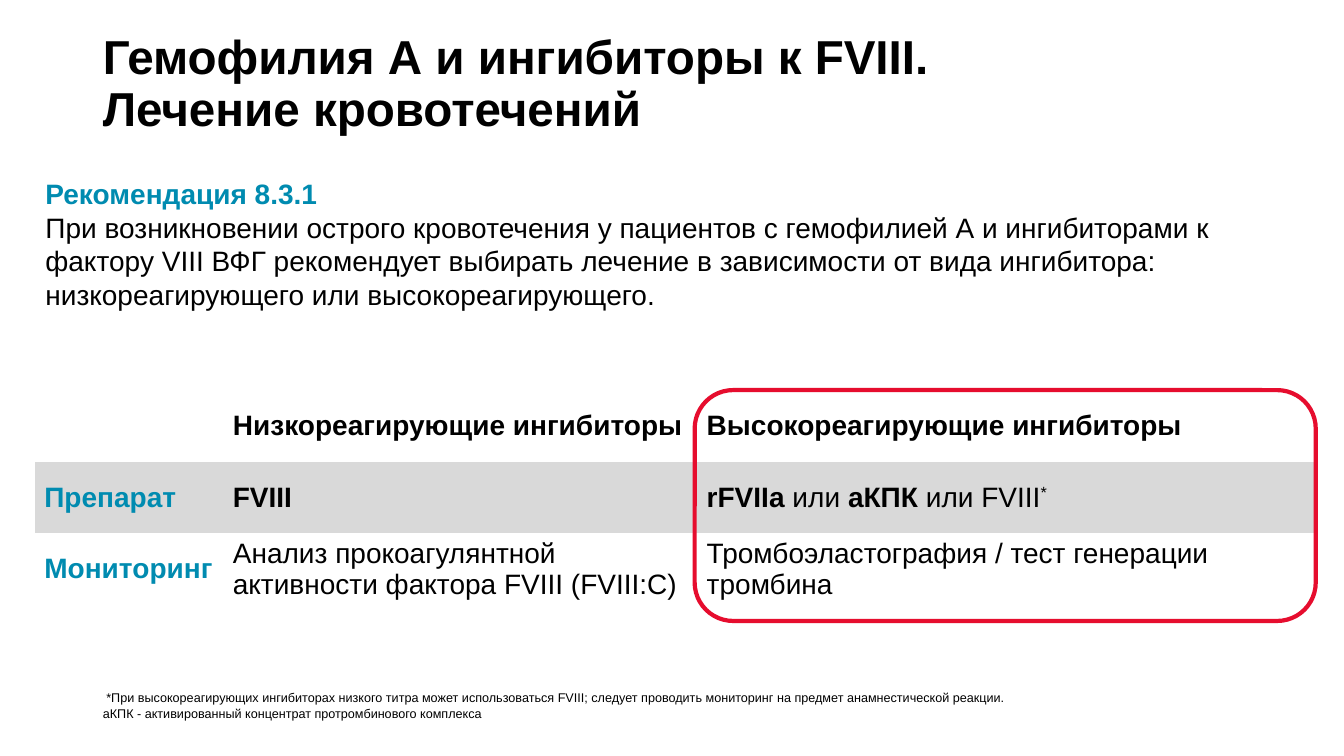
from pptx import Presentation
from pptx.dml.color import RGBColor
from pptx.enum.shapes import MSO_SHAPE
from pptx.enum.text import MSO_ANCHOR, MSO_AUTO_SIZE, PP_ALIGN
from pptx.oxml.ns import qn
from pptx.util import Inches, Pt
from lxml.etree import SubElement

HEX = {"ink": "000000", "teal": "008BB0", "red": "E60D2E",
       "white": "FFFFFF", "grey": "D9D9D9"}

# A run is (text, style words); a paragraph is a list of runs.
TITLE = [[("Гемофилия А и ингибиторы к FVIII. \vЛечение кровотечений", "bold")]]
ADVICE = [
    [("Рекомендация 8.3.1", "bold teal")],
    [("При возникновении острого кровотечения у пациентов с гемофилией А и "
      "ингибиторами к фактору VIII ВФГ рекомендует выбирать лечение в "
      "зависимости от вида ингибитора: низкореагирующего или "
      "высокореагирующего.", "")],
]
NOTES = [
    [(" *При высокореагирующих ингибиторах низкого титра может использоваться "
      "FVIII; следует проводить мониторинг на предмет анамнестической реакции.", "")],
    [("аКПК - активированный концентрат протромбинового комплекса", "")],
]
ROWS = [
    ("white", [[], [("Низкореагирующие ингибиторы", "bold")],
               [("Высокореагирующие ингибиторы", "bold")]]),
    ("grey", [[("Препарат", "bold teal")], [("FVIII", "bold")],
              [("rFVIIa", "bold"), (" или ", ""), ("аКПК ", "bold"),
               ("или FVIII", ""), ("*", "super")]]),
    (None, [[("Мониторинг", "bold teal")],
            [("Анализ прокоагулянтной активности фактора FVIII (FVIII:C)", "")],
            [("Тромбоэластография / тест генерации тромбина", "")]]),
]
COLS = [1.87, 4.7, 6.13]
ROW_H = 0.71
LEFT, TOP = 0.35, 3.87
NO_GRID = "{2D5ABB26-0587-4C30-8999-92F81FD0307C}"


def color(name):
    return RGBColor.from_string(HEX[name])


def write(para, runs, size):
    for text, style in runs:
        for i, part in enumerate(text.split("\v")):
            if i:
                para.add_line_break()
            run = para.add_run()
            run.text = part
            font = run.font
            font.name, font.size = "Arial", Pt(size)
            font.bold = "bold" in style
            font.color.rgb = color("teal" if "teal" in style else "ink")
            if "super" in style:
                run._r.get_or_add_rPr().set("baseline", "30000")


def fill_holder(holder, box, paras, size, anchor, spacing):
    """Move a placeholder and write plain, unbulleted paragraphs in it."""
    holder.left, holder.top, holder.width, holder.height = map(Inches, box)
    frame = holder.text_frame
    frame.word_wrap = True
    frame.auto_size = MSO_AUTO_SIZE.NONE
    frame.vertical_anchor = anchor
    for i, runs in enumerate(paras):
        para = frame.add_paragraph() if i else frame.paragraphs[0]
        props = para._p.get_or_add_pPr()
        props.set("marL", "0")
        props.set("indent", "0")
        SubElement(props, qn("a:buNone"))
        para.alignment = PP_ALIGN.LEFT
        para.space_before = para.space_after = Pt(0)
        para.line_spacing = spacing
        write(para, runs, size)
    return frame


def add_grid(slide):
    frame = slide.shapes.add_table(
        len(ROWS), len(COLS), Inches(LEFT), Inches(TOP),
        Inches(sum(COLS)), Inches(ROW_H * len(ROWS)))
    table = frame.table
    table.first_row = table.horz_banding = False
    table._tbl.tblPr.find(qn("a:tableStyleId")).text = NO_GRID
    for col, width in zip(table.columns, COLS):
        col.width = Inches(width)
    for r, (shade, cells) in enumerate(ROWS):
        table.rows[r].height = Inches(ROW_H)
        for c, runs in enumerate(cells):
            cell = table.cell(r, c)
            cell.vertical_anchor = MSO_ANCHOR.MIDDLE
            cell.margin_left = cell.margin_right = Inches(0.09)
            cell.margin_top = cell.margin_bottom = Inches(0.03)
            if shade:
                cell.fill.solid()
                cell.fill.fore_color.rgb = color(shade)
            else:
                cell.fill.background()
            write(cell.text_frame.paragraphs[0], runs, 20)


def add_ring(slide):
    """Outline the last column of the table."""
    left = LEFT + sum(COLS[:-1]) - 0.03
    ring = slide.shapes.add_shape(
        MSO_SHAPE.ROUNDED_RECTANGLE, Inches(left), Inches(TOP),
        Inches(LEFT + sum(COLS) - left), Inches(2.29))
    ring.shadow.inherit = False
    ring.fill.background()
    ring.line.color.rgb = color("red")
    ring.line.width = Pt(3)


def main():
    deck = Presentation()
    deck.slide_width, deck.slide_height = Inches(13.33), Inches(7.5)
    slide = deck.slides.add_slide(deck.slide_layouts[7])
    title, advice, notes = slide.placeholders
    fill_holder(title, (0.92, 0.25, 11.5, 1.19), TITLE, 34, MSO_ANCHOR.MIDDLE, 0.9)
    body = fill_holder(advice, (LEFT, 1.35, 11.88, 5.05), ADVICE, 20,
                       MSO_ANCHOR.TOP, Pt(24))
    body.margin_top = Inches(0.4)
    foot = fill_holder(notes, (0.92, 6.75, 10.85, 0.4), NOTES, 9,
                       MSO_ANCHOR.BOTTOM, 1.0)
    foot.margin_bottom = 0
    add_grid(slide)
    add_ring(slide)
    deck.save("out.pptx")


if __name__ == "__main__":
    main()
